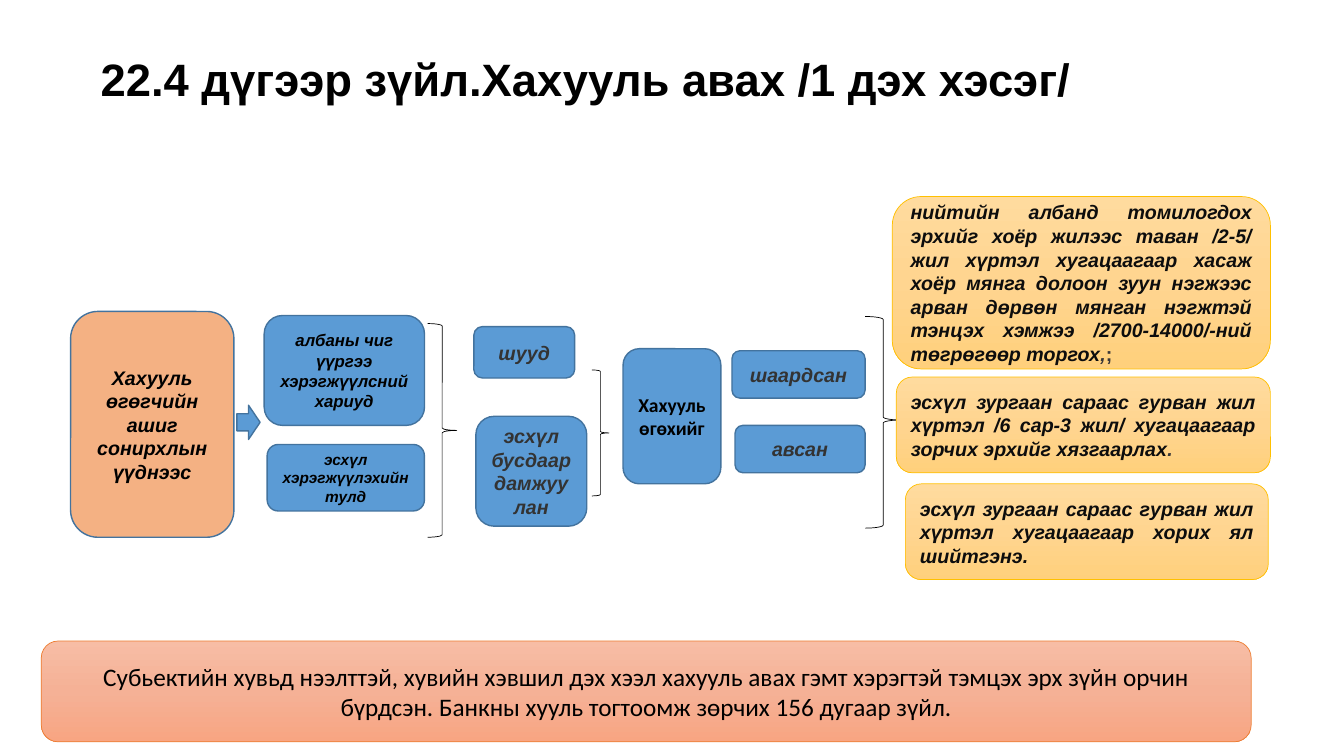
from copy import deepcopy
from pptx import Presentation
from pptx.dml.color import RGBColor
from pptx.enum.shapes import MSO_SHAPE
from pptx.enum.text import MSO_ANCHOR, PP_ALIGN
from pptx.util import Inches, Pt

CARD = MSO_SHAPE.FLOWCHART_ALTERNATE_PROCESS
ROUND = MSO_SHAPE.ROUNDED_RECTANGLE
BRACE = MSO_SHAPE.RIGHT_BRACE
ARROW = MSO_SHAPE.RIGHT_ARROW
MIDDLE = MSO_ANCHOR.MIDDLE
LEFT, CENTER, JUSTIFY = PP_ALIGN.LEFT, PP_ALIGN.CENTER, PP_ALIGN.JUSTIFY

BLACK, GREY, INK, DARK = "000000", "333333", "0D0D0D", "3B3838"
BLUE, EDGE, PEACH = "5B9BD5", "43739E", "F4B183"
GOLD = ("FFDB9E", "FFD590", "FFD07C")
CORAL = ("F7BDA5", "F5B196", "F8A582")

TITLE = "22.4 дүгээр зүйл.Хахууль авах /1 дэх хэсэг/"
STEPS = [
    ((0.7, 3.09, 1.62, 2.24), PEACH, "Хахууль өгөгчийн ашиг сонирхлын үүднээс", 14, BLACK),
    ((2.62, 3.13, 1.59, 1.09), BLUE, "албаны чиг үүргээ хэрэгжүүлсний хариуд", 12, BLACK),
    ((2.65, 4.41, 1.56, 0.66), BLUE, "эсхүл хэрэгжүүлэхийн тулд", 11, BLACK),
    ((4.7, 3.24, 1, 0.51), BLUE, "шууд", 14, GREY),
    ((4.72, 4.13, 1.1, 1.09), BLUE, "эсхүл бусдаардамжуулан", 14, GREY),
    ((7.26, 3.48, 1.32, 0.47), BLUE, "шаардсан", 14, GREY),
    ((7.29, 4.22, 1.29, 0.47), BLUE, "авсан", 14, GREY),
]
BRIBE = ((6.18, 3.46, 0.97, 1.34), "Хахууль өгөхийг")
PENALTIES = [
    ((8.85, 1.95, 3.75, 1.71),
     "нийтийн албанд томилогдох эрхийг хоёр жилээс таван /2-5/ жил хүртэл "
     "хугацаагаар хасаж хоёр мянга долоон зуун нэгжээс арван дөрвөн мянган нэгжтэй "
     "тэнцэх хэмжээ /2700-14000/-ний төгрөгөөр торгох", [(",", True), (";", False)]),
    ((8.89, 3.74, 3.71, 0.95),
     "эсхүл зургаан сараас гурван жил хүртэл /6 сар-3 жил/ хугацаагаар зорчих "
     "эрхийг хязгаарлах", [(".", True)]),
    ((8.98, 4.8, 3.6, 0.95),
     "эсхүл зургаан сараас гурван жил хүртэл хугацаагаар хорих ял шийтгэнэ.", []),
]
BRACES = [
    ((4.24, 3.21, 0.29, 2.12), 0.5),
    ((5.87, 3.67, 0.17, 1.25), 0.5),
    ((8.58, 3.14, 0.36, 2.1), 0.489),
]
NOTE = ("Субьектийн хувьд нээлттэй, хувийн хэвшил дэх хээл хахууль авах гэмт хэрэгтэй "
        "тэмцэх эрх зүйн орчин бүрдсэн. Банкны хууль тогтоомж зөрчих 156 дугаар зүйл.")

prs = Presentation()
prs.slide_width, prs.slide_height = Inches(13.33), Inches(7.5)
slide = prs.slides.add_slide(prs.slide_layouts[6])


def rgb(code):
    return RGBColor.from_string(code)


def style(run, size, color, font="Arial", bold=True, slant=True):
    run.font.name, run.font.size = font, Pt(size)
    run.font.bold, run.font.italic = bold, slant
    run.font.color.rgb = rgb(color)


def write(shape, text, size, color, align=CENTER, **look):
    frame = shape.text_frame
    frame.word_wrap, frame.vertical_anchor = True, MIDDLE
    para = frame.paragraphs[0]
    para.text, para.alignment = text, align
    style(para.runs[0], size, color, **look)
    return para


def blend(fill, colors):
    fill.gradient()
    fill.gradient_angle = 270
    first = fill.gradient_stops[0]._gs
    first.addnext(deepcopy(first))
    for stop, color, pos in zip(fill.gradient_stops, colors, (0, 0.5, 1)):
        stop.color.rgb, stop.position = rgb(color), pos


def draw(kind, box, fill, line, width):
    shape = slide.shapes.add_shape(kind, *map(Inches, box))
    shape.shadow.inherit = False
    shape.line.color.rgb, shape.line.width = rgb(line), Pt(width)
    if fill is None:
        shape.fill.background()
    elif isinstance(fill, tuple):
        blend(shape.fill, fill)
    else:
        shape.fill.solid()
        shape.fill.fore_color.rgb = rgb(fill)
    return shape


title = slide.shapes.add_textbox(*map(Inches, (0.9, 0.09, 11.5, 1.45)))
write(title, TITLE, 32.4, BLACK, LEFT, slant=False).line_spacing = 0.9

for box, fill, text, size, color in STEPS:
    write(draw(CARD, box, fill, EDGE, 1), text, size, color)

box, text = BRIBE
write(draw(CARD, box, BLUE, EDGE, 1), text, 14, BLACK, font="Calibri", slant=False)

draw(ARROW, (2.35, 4.02, 0.23, 0.34), BLUE, EDGE, 1)

for box, tip in BRACES:
    brace = draw(BRACE, box, None, BLACK, 0.5)
    brace.adjustments[1] = tip

for box, text, marks in PENALTIES:
    para = write(draw(CARD, box, GOLD, "FFC000", 0.5), text, 14, INK, JUSTIFY)
    for mark, slant in marks:
        run = para.add_run()
        run.text = mark
        style(run, 14, DARK, slant=slant)

note = draw(ROUND, (0.41, 6.36, 12, 1), CORAL, "ED7D31", 0.5)
write(note, NOTE, 18, BLACK, font="Calibri", bold=False, slant=False)

prs.save("out.pptx")
